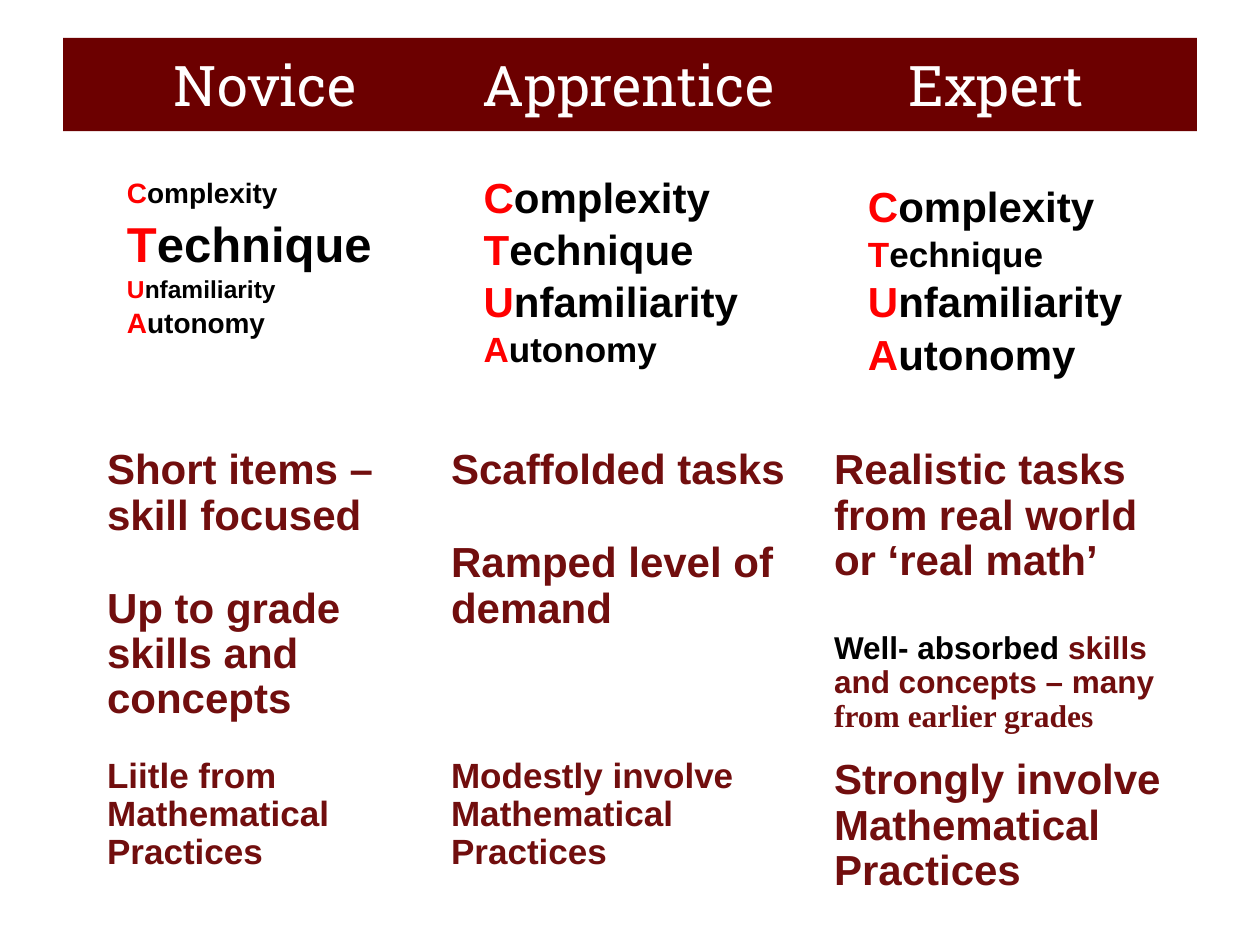
import pptx
import pptx.util
import pptx.dml.color
import pptx.enum.text
import pptx.oxml.ns
from lxml import etree

Inches = pptx.util.Inches
Pt = pptx.util.Pt

RED = "FF0000"
BLACK = "000000"
MAROON = "710E0E"
BAND = "6C0000"
WHITE = "FFFFFF"

WORDS = ["Complexity", "Technique", "Unfamiliarity", "Autonomy"]
LISTS = [
    (0.91, 1.23, 2.27, 1.95, [16, 28, 14, 16]),
    (3.74, 1.31, 2.34, 1.65, [24, 24, 24, 20]),
    (6.79, 1.38, 2.52, 1.65, [24, 20, 24, 24]),
]

WIDTHS = [2.73, 3.04, 2.97]
HEIGHTS = [2.46, 1.52]
ABSORBED = [
    ("Well- absorbed ", BLACK, "Arial"),
    ("skills and concepts – many ", MAROON, "Arial"),
    ("from earlier grades", MAROON, "Times New Roman"),
]


def plain(text):
    return [(text, MAROON, "Arial")]


ROWS = [
    [
        (24, 27, [plain("Short items – skill focused"),
                  plain("Up to grade skills and concepts")]),
        (24, 27, [plain("Scaffolded tasks"),
                  plain("Ramped level of demand")]),
        (24, 27, [plain("Realistic tasks from real world or ‘real math’"),
                  ABSORBED]),
    ],
    [
        (20, 0, [plain("Liitle from"), plain("Mathematical Practices")]),
        (20, 0, [plain("Modestly involve Mathematical Practices")]),
        (24, 0, [plain("Strongly involve Mathematical Practices")]),
    ],
]


def color(code):
    return pptx.dml.color.RGBColor.from_string(code)


def style(run, size, code, face="Arial", bold=True):
    run.font.size = Pt(size)
    run.font.name = face
    run.font.bold = bold
    run.font.color.rgb = color(code)


def add_run(para, text, size, code, face="Arial"):
    run = para.add_run()
    run.text = text
    style(run, size, code, face)


def next_para(frame, index):
    return frame.add_paragraph() if index else frame.paragraphs[0]


def set_tabs(para, stops):
    qn = pptx.oxml.ns.qn
    tabs = etree.SubElement(para._p.get_or_add_pPr(), qn("a:tabLst"))
    for stop in stops:
        etree.SubElement(tabs, qn("a:tab"), pos=str(Inches(stop)), algn="l")


def add_title(slide):
    title = slide.shapes.title
    title.left, title.top = Inches(0.5), Inches(0.3)
    title.width, title.height = Inches(9), Inches(0.74)
    title.fill.solid()
    title.fill.fore_color.rgb = color(BAND)
    frame = title.text_frame
    frame.text = "Novice\tApprentice\tExpert"
    frame.auto_size = pptx.enum.text.MSO_AUTO_SIZE.NONE
    frame.vertical_anchor = pptx.enum.text.MSO_ANCHOR.MIDDLE
    frame.margin_left = Inches(0.88)
    para = frame.paragraphs[0]
    para.alignment = pptx.enum.text.PP_ALIGN.LEFT
    set_tabs(para, [2.45, 5.83])
    for run in para.runs:
        style(run, 32, WHITE, "Roboto Slab", False)


def add_list(slide, left, top, width, height, sizes):
    box = slide.shapes.add_textbox(
        Inches(left), Inches(top), Inches(width), Inches(height))
    frame = box.text_frame
    frame.word_wrap = True
    for index, (word, size) in enumerate(zip(WORDS, sizes)):
        para = next_para(frame, index)
        para.space_before = Pt(1)
        add_run(para, word[0], size, RED)
        add_run(para, word[1:], size, BLACK)
        if index == 0 and size < 24:
            add_run(para, " ", 24, BLACK)


def fill_cell(cell, size, gap, paras):
    cell.fill.background()
    for index, parts in enumerate(paras):
        para = next_para(cell.text_frame, index)
        para.line_spacing = 0.97
        if index:
            para.space_before = Pt(gap)
        for text, code, face in parts:
            add_run(para, text, 18 if parts is ABSORBED else size, code, face)


def add_grid(slide):
    frame = slide.shapes.add_table(
        len(ROWS), len(WIDTHS), Inches(0.75), Inches(3.51),
        Inches(sum(WIDTHS)), Inches(sum(HEIGHTS)))
    table = frame.table
    table.first_row = False
    table.horz_banding = False
    for column, width in zip(table.columns, WIDTHS):
        column.width = Inches(width)
    for row, height, items in zip(table.rows, HEIGHTS, ROWS):
        row.height = Inches(height)
        for cell, item in zip(row.cells, items):
            fill_cell(cell, *item)


def main():
    deck = pptx.Presentation()
    deck.slide_width, deck.slide_height = Inches(10), Inches(7.5)
    slide = deck.slides.add_slide(deck.slide_layouts[5])
    add_title(slide)
    add_grid(slide)
    for item in LISTS:
        add_list(slide, *item)
    deck.save("out.pptx")


if __name__ == "__main__":
    main()
